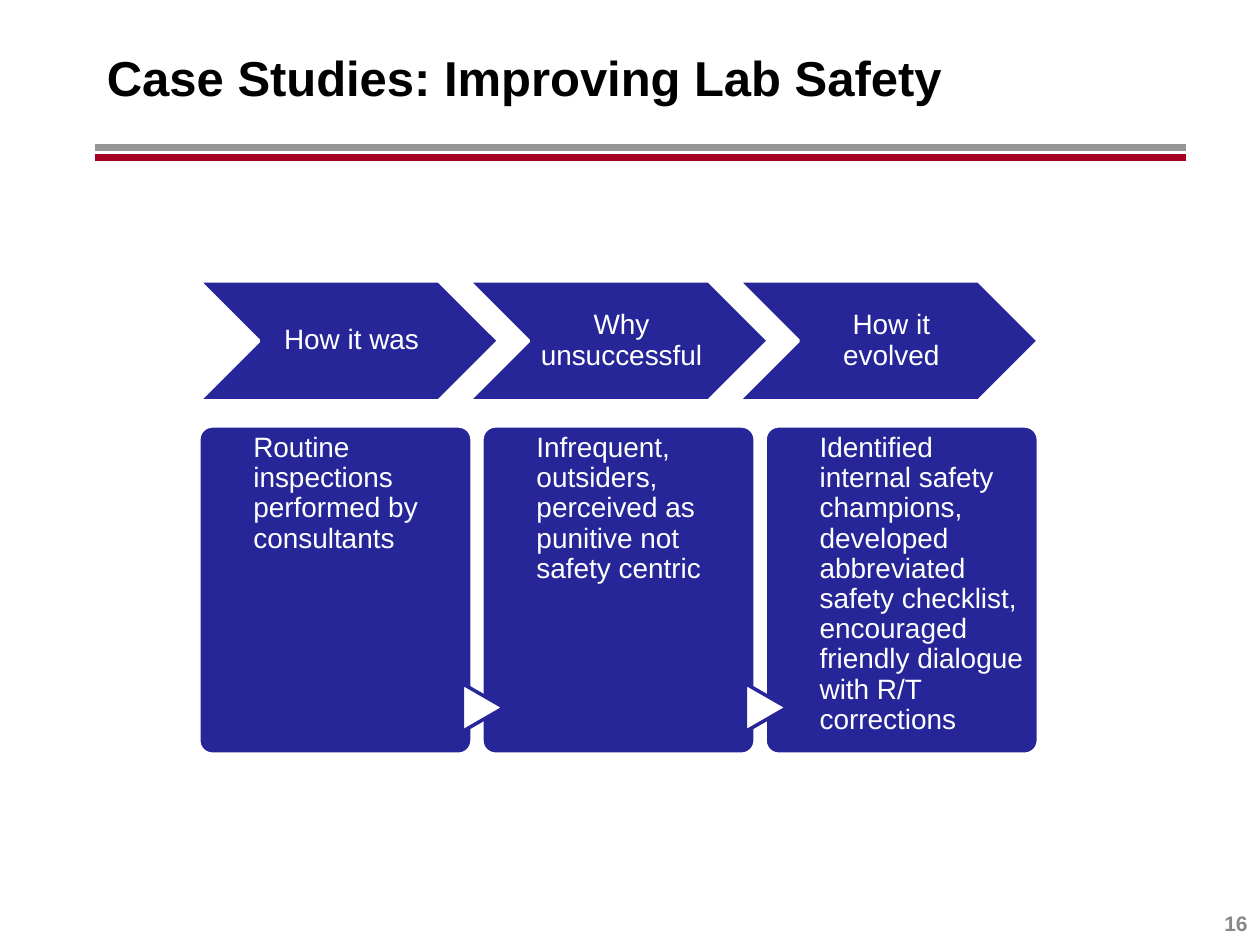
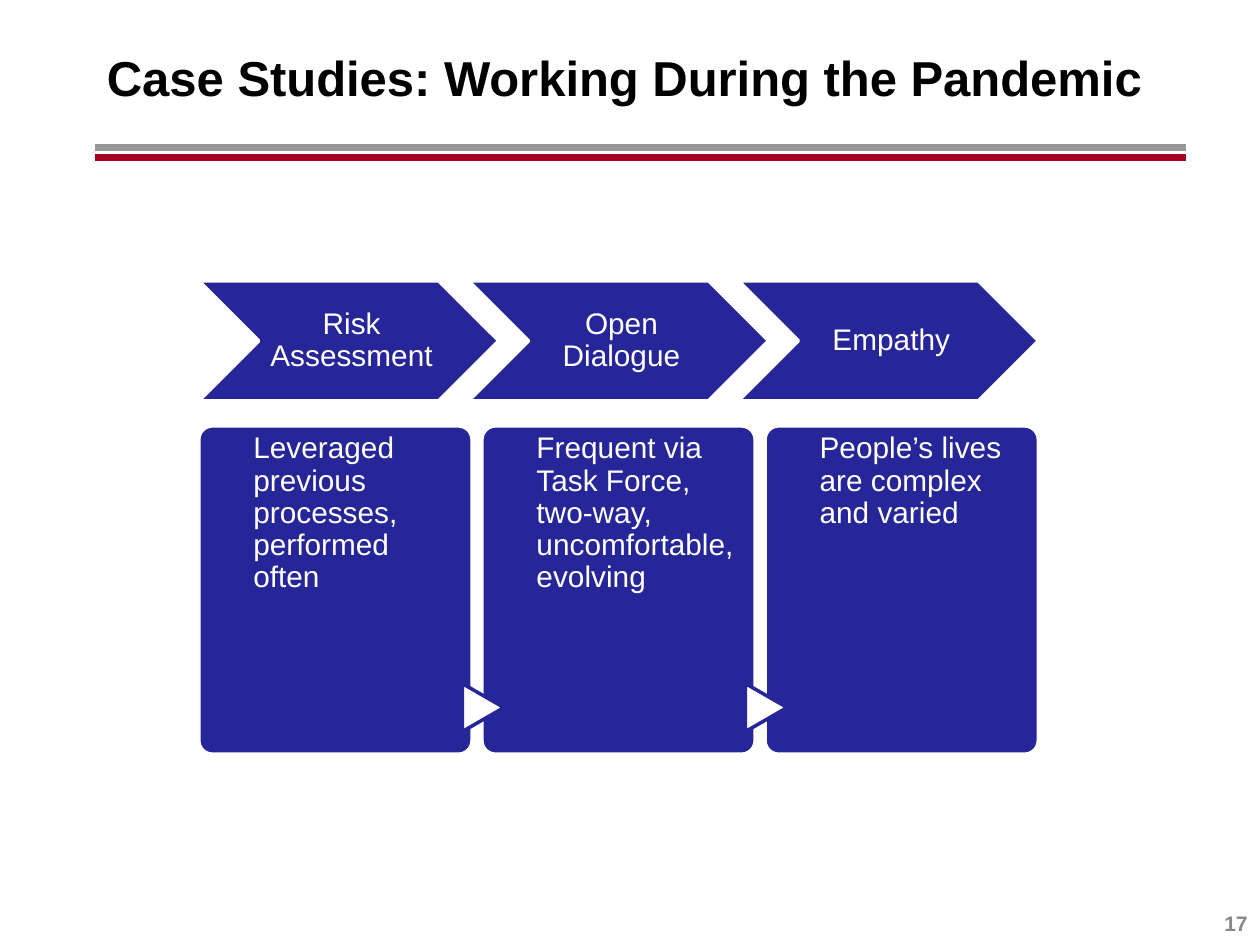
"""Build two case study slides, each with three steps and their details."""
from lxml.etree import SubElement
from pptx import Presentation
from pptx.dml.color import RGBColor
from pptx.enum.shapes import MSO_CONNECTOR, MSO_SHAPE as SHAPE
from pptx.enum.text import MSO_ANCHOR as ANCHOR, PP_ALIGN as ALIGN
from pptx.oxml.ns import qn
from pptx.util import Pt

FONT = "Arial"
COLORS = {
    name: RGBColor.from_string(value)
    for name, value in {
        "navy": "262699", "white": "FFFFFF", "black": "000000",
        "rule_gray": "969696", "rule_red": "A50021", "number": "888888",
    }.items()
}
RULES = [(84.25, "rule_gray"), (90, "rule_red")]
LEFT = 113.6
STEP_PITCH, STEP_TOP, STEP_WIDTH, STEP_HEIGHT = 154.2, 160.5, 171.4, 68.5
CARD_PITCH, CARD_TOP, CARD_WIDTH, CARD_HEIGHT = 161.8, 243.4, 156.2, 187.6

PAGES = [
    ("Case Studies: Improving Lab Safety", 16, 16, [
        ("How it was", "Routine inspections performed by consultants"),
        ("Why unsuccessful",
         "Infrequent, outsiders, perceived as punitive not safety centric"),
        ("How it evolved",
         "Identified internal safety champions, developed abbreviated safety "
         "checklist, encouraged friendly dialogue with R/T corrections"),
    ]),
    ("Case Studies: Working During the Pandemic", 17, 17, [
        ("Risk Assessment", "Leveraged previous processes, performed often"),
        ("Open Dialogue",
         "Frequent via Task Force, two-way, uncomfortable, evolving"),
        ("Empathy", "People’s lives are complex and varied"),
    ]),
]


def add_text(page, place, text, size, color, bold=False, align=ALIGN.LEFT,
             anchor=ANCHOR.MIDDLE, insets=(7.2, 3.6, 7.2, 3.6), spacing=1.0):
    box = page.shapes.add_textbox(*map(Pt, place))
    frame = box.text_frame
    frame.word_wrap = True
    frame.vertical_anchor = anchor
    (frame.margin_left, frame.margin_top,
     frame.margin_right, frame.margin_bottom) = map(Pt, insets)
    para = frame.paragraphs[0]
    para.text = text
    para.alignment = align
    para.line_spacing = spacing
    para.font.name = FONT
    para.font.size = Pt(size)
    para.font.bold = bold
    para.font.color.rgb = COLORS[color]


def add_block(page, kind, place, fill, line):
    block = page.shapes.add_shape(kind, *map(Pt, place))
    block.shadow.inherit = False
    block.fill.solid()
    block.fill.fore_color.rgb = COLORS[fill]
    block.line.color.rgb = COLORS[line]
    block.line.width = Pt(2)
    return block


deck = Presentation()
deck.slide_width, deck.slide_height = Pt(720), Pt(540)

for title, number, size, steps in PAGES:
    page = deck.slides.add_slide(deck.slide_layouts[6])

    for y, color in RULES:
        rule = page.shapes.add_connector(
            MSO_CONNECTOR.STRAIGHT, Pt(54), Pt(y), Pt(678), Pt(y))
        rule.line.color.rgb = COLORS[color]
        rule.line.width = Pt(4.25)
        SubElement(rule._element.spPr, qn("a:effectLst"))

    add_text(page, (54, 13, 624, 62), title, 28, "black", bold=True)
    add_text(page, (552, 513, 168, 28.8), str(number), 12, "number",
             bold=True, align=ALIGN.RIGHT)

    for index, (heading, detail) in enumerate(steps):
        step_left = LEFT + index * STEP_PITCH
        chevron = add_block(
            page, SHAPE.CHEVRON,
            (step_left, STEP_TOP, STEP_WIDTH, STEP_HEIGHT), "navy", "white")
        chevron.adjustments[0] = 0.5
        add_text(page, (step_left + 34.2, STEP_TOP, 103, STEP_HEIGHT),
                 heading, size, "white", align=ALIGN.CENTER,
                 insets=(5, 1.7, 1.7, 1.7), spacing=0.9)

        card_left = LEFT + index * CARD_PITCH
        card = add_block(
            page, SHAPE.ROUNDED_RECTANGLE,
            (card_left, CARD_TOP, CARD_WIDTH, CARD_HEIGHT), "navy", "white")
        card.adjustments[0] = 0.05
        if index:
            arrow = add_block(page, SHAPE.FLOWCHART_EXTRACT,
                              (card_left - 13, 392.4, 27.4, 23.8),
                              "white", "navy")
            arrow.rotation = 90
        add_text(page, (card_left + 31.2, CARD_TOP, 117, CARD_HEIGHT),
                 detail, size, "white", anchor=ANCHOR.TOP,
                 insets=(0, 4.2, 0, 0), spacing=0.9)

deck.save("out.pptx")
